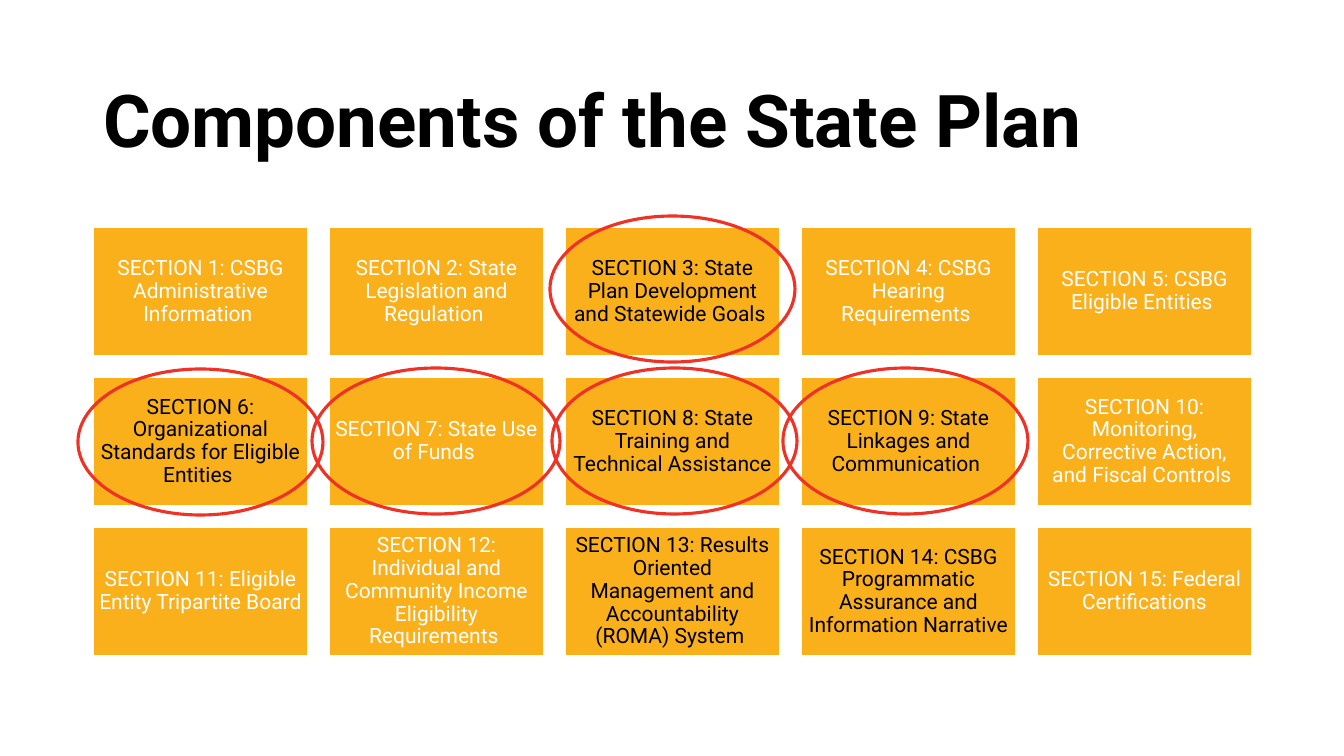
from pptx import Presentation
from pptx import util as u
from pptx.dml.color import RGBColor
from pptx.enum import shapes, text

TITLE = "Components of the State Plan"
# Each section: wording, text colour
SECTIONS = [
    ("SECTION 1: CSBG Administrative Information ", "white"),
    ("SECTION 2: State Legislation and Regulation ", "white"),
    ("SECTION 3: State Plan Development and Statewide Goals ", "black"),
    ("SECTION 4: CSBG Hearing Requirements ", "white"),
    ("SECTION 5: CSBG Eligible Entities ", "white"),
    ("SECTION 6: Organizational Standards for Eligible Entities ", "black"),
    ("SECTION 7: State Use of Funds ", "white"),
    ("SECTION 8: State Training and Technical Assistance ", "black"),
    ("SECTION 9: State Linkages and Communication ", "black"),
    ("SECTION 10: Monitoring, Corrective Action, and Fiscal Controls ", "white"),
    ("SECTION 11: Eligible Entity Tripartite Board ", "white"),
    ("SECTION 12: Individual and Community Income Eligibility Requirements ", "white"),
    ("SECTION 13: Results Oriented Management and Accountability (ROMA) System ", "black"),
    ("SECTION 14: CSBG Programmatic Assurance and Information Narrative ", "black"),
    ("SECTION 15: Federal Certifications", "white"),
]
# Hand-placed rings: left, top, width, height
RINGS = [
    (550, 216, 245, 146),
    (78, 369, 245, 146),
    (552, 368, 245, 146),
    (783, 368, 245, 146),
    (312, 368, 248, 146),
]
COLORS = {"white": "FFFFFF", "black": "000000", "amber": "FAB01A", "red": "EE3326"}
FONT = "Roboto"
PX = 914400 / 100.8
SLIDE_W, SLIDE_H = 1344, 756
TITLE_BOX = (93, 61, 1159, 125)
COLUMNS = 5
GRID_LEFT, GRID_TOP = 93, 227
TILE_W, TILE_H = 215, 129
STEP_X, STEP_Y = 236, 150
INSET = 6


def px(n):
    return u.Emu(round(n * PX))


def rgb(name):
    return RGBColor.from_string(COLORS[name])


def set_all(obj, **values):
    for name, value in values.items():
        setattr(obj, name, value)


def write(sp, words, size, color, align, bold=False):
    tf = sp.text_frame
    set_all(tf, word_wrap=True, auto_size=text.MSO_AUTO_SIZE.NONE,
            vertical_anchor=text.MSO_ANCHOR.MIDDLE)
    p = tf.paragraphs[0]
    set_all(p, alignment=align, line_spacing=0.9)
    r = p.add_run()
    r.text = words
    set_all(r.font, name=FONT, size=u.Pt(size), bold=bold)
    r.font.color.rgb = rgb(color)


def add_outlined(slide, kind, box, line_color, line_width):
    sp = slide.shapes.add_shape(kind, *map(px, box))
    sp.shadow.inherit = False
    sp.line.color.rgb = rgb(line_color)
    sp.line.width = u.Pt(line_width)
    return sp


def add_tile(slide, index, words, color):
    row, col = divmod(index, COLUMNS)
    box = (GRID_LEFT + col * STEP_X, GRID_TOP + row * STEP_Y, TILE_W, TILE_H)
    sp = add_outlined(slide, shapes.MSO_SHAPE.RECTANGLE, box, "white", 1)
    sp.fill.solid()
    sp.fill.fore_color.rgb = rgb("amber")
    for side in ("left", "top", "right", "bottom"):
        setattr(sp.text_frame, f"margin_{side}", px(INSET))
    write(sp, words, 15, color, text.PP_ALIGN.CENTER)


def main():
    prs = Presentation()
    set_all(prs, slide_width=px(SLIDE_W), slide_height=px(SLIDE_H))
    slide = prs.slides.add_slide(prs.slide_layouts[5])

    title = slide.shapes.title
    set_all(title, **dict(zip(("left", "top", "width", "height"), map(px, TITLE_BOX))))
    write(title, TITLE, 52, "black", text.PP_ALIGN.LEFT, bold=True)

    for i, (words, color) in enumerate(SECTIONS):
        add_tile(slide, i, words, color)
    for box in RINGS:
        ring = add_outlined(slide, shapes.MSO_SHAPE.OVAL, box, "red", 2.25)
        ring.fill.background()

    prs.save("out.pptx")


if __name__ == "__main__":
    main()
